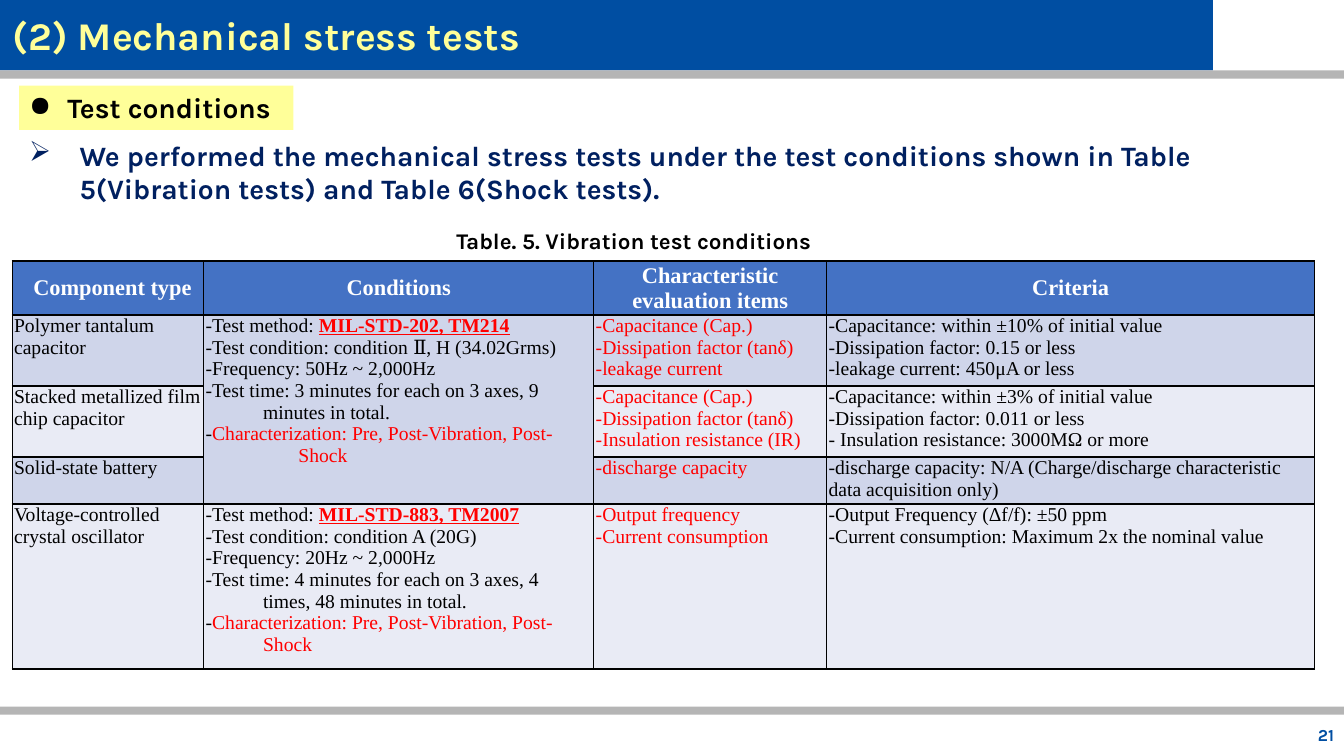
"""Build the slide on mechanical stress test conditions."""
from dataclasses import dataclass

from lxml import etree
from pptx import Presentation
from pptx.dml.color import RGBColor
from pptx.enum.shapes import MSO_SHAPE
from pptx.enum.text import MSO_ANCHOR, PP_ALIGN
from pptx.oxml.ns import qn
from pptx.util import Emu, Inches, Pt

RECT = MSO_SHAPE.RECTANGLE
TOP, MID = MSO_ANCHOR.TOP, MSO_ANCHOR.MIDDLE
LEFT, CENTER, RIGHT = PP_ALIGN.LEFT, PP_ALIGN.CENTER, PP_ALIGN.RIGHT
WIDE, HIGH = Inches(13.33), Inches(7.5)


@dataclass(frozen=True)
class Theme:
    """Colours, fonts and type sizes."""
    blue: str = "004EA2"
    gray: str = "B5B5B5"
    pale: str = "FFFF99"
    navy: str = "002060"
    black: str = "000000"
    white: str = "FFFFFF"
    red: str = "FF0000"
    head: str = "4472C4"
    bands: tuple[str, str] = ("CFD5EA", "E9EBF5")
    sans: str = "Karla"
    serif: str = "Times New Roman"
    title: int = 28
    lead: int = 20
    label: int = 16
    body: int = 14
    page: int = 12


THEME = Theme()


@dataclass(frozen=True)
class Box:
    """A place in percent of the slide's width and height."""
    left: float
    top: float
    width: float
    height: float

    def emu(self) -> tuple[Emu, Emu, Emu, Emu]:
        """Return the place in slide units."""
        return across(self.left), down(self.top), across(self.width), down(self.height)


@dataclass(frozen=True)
class Panel:
    """A filled bar, a text box or both."""
    box: Box
    fill: str = ""
    text: str = ""
    size: int = 0
    hue: str = THEME.black
    bullet: str = ""
    hang: float = 0
    align: PP_ALIGN = LEFT
    anchor: MSO_ANCHOR = TOP


@dataclass(frozen=True)
class Span:
    """A stretch of table text in one style."""
    text: str
    hue: str = THEME.black
    bold: bool = False
    line: bool = False


@dataclass(frozen=True)
class Para:
    """A paragraph of table text."""
    spans: tuple[Span, ...]
    hang: float = 0


Paras = tuple[Para, ...]


def across(share: float) -> Emu:
    """Turn a percentage of the width into a length."""
    return Emu(round(WIDE * share / 100))


def down(share: float) -> Emu:
    """Turn a percentage of the height into a length."""
    return Emu(round(HIGH * share / 100))


def lines(*texts: str, hue: str = THEME.black) -> Paras:
    """Make plain paragraphs in one colour."""
    return tuple(Para((Span(text, hue),)) for text in texts)


def method(code: str, state: str, start: int, time: str, hang: float) -> Paras:
    """Describe one vibration method."""
    note = Span("Characterization: Pre, Post-Vibration, Post-Shock", THEME.red)
    return (
        Para((Span("-Test method: "), Span(code, THEME.red, True, True))),
        *lines(f"-Test condition: condition {state}", f"-Frequency: {start}Hz ~ 2,000Hz"),
        Para((Span(f"-Test time: {time} in total."),), 0.57),
        Para((Span("-"), note), hang),
    )


PANELS = (
    Panel(Box(0, 0, 90.25, 9.33), THEME.blue),
    Panel(Box(0, 9.33, 100, 1.07), THEME.gray),
    Panel(Box(0, 93.47, 100, 1.07), THEME.gray),
    Panel(Box(95.65, 94.53, 4.35, 5.33), "", "21", THEME.page, THEME.blue,
          align=RIGHT, anchor=MID),
    Panel(Box(1.43, 11.33, 20.41, 5.87), THEME.pale, "Test conditions", THEME.lead,
          bullet="●", hang=0.38),
    Panel(Box(1.43, 17.6, 97.9, 10.27), "",
          "We performed the mechanical stress tests under the test conditions shown in "
          "Table 5(Vibration tests) and Table 6(Shock tests).",
          THEME.lead, THEME.navy, "➢", 0.5),
    Panel(Box(33.23, 29.33, 33.61, 4.93), THEME.white,
          "Table. 5. Vibration test conditions", THEME.label),
    Panel(Box(0.23, 1.73, 90, 5.87), "", "(2) Mechanical stress tests", THEME.title,
          THEME.pale, anchor=MID),
)

COLS = (14.25, 29.03, 17.33, 36.31)
ROWS = (7.14, 9.39, 9.39, 6.15, 21.83)
GRID = Box(0.9, 34.53, sum(COLS), sum(ROWS))
HEADS = ("Component type", "Conditions", "Characteristic evaluation items", "Criteria")
CELLS: tuple[tuple[Paras, ...], ...] = (
    tuple((Para((Span(head, THEME.white, True),)),) for head in HEADS),
    (lines("Polymer tantalum capacitor"),
     method("MIL-STD-202, TM214", "Ⅱ, H (34.02Grms)", 50,
            "3 minutes for each on 3 axes, 9 minutes", 0.92),
     lines("-Capacitance (Cap.)", "-Dissipation factor (tanδ)", "-leakage current",
           hue=THEME.red),
     lines("-Capacitance: within ±10% of initial value", "-Dissipation factor: 0.15 or less",
           "-leakage current: 450μA or less")),
    (lines("Stacked metallized film chip capacitor"), (),
     lines("-Capacitance (Cap.)", "-Dissipation factor (tanδ)",
           "-Insulation resistance (IR)", hue=THEME.red),
     lines("-Capacitance: within ±3% of initial value", "-Dissipation factor: 0.011 or less",
           "- Insulation resistance: 3000MΩ or more")),
    (lines("Solid-state battery"), (),
     lines("-discharge capacity", hue=THEME.red),
     lines("-discharge capacity: N/A (Charge/discharge characteristic data acquisition only)")),
    (lines("Voltage-controlled crystal oscillator"),
     method("MIL-STD-883, TM2007", "A (20G)", 20,
            "4 minutes for each on 3 axes, 4 times, 48 minutes", 0.57),
     lines("-Output frequency", "-Current consumption", hue=THEME.red),
     lines("-Output Frequency (Δf/f): ±50 ppm",
           "-Current consumption: Maximum 2x the nominal value")),
)


def indent(para, left: float, first: float) -> None:
    """Set a paragraph's left margin and first-line indent."""
    props = para._p.get_or_add_pPr()
    props.set("marL", str(Inches(left)))
    props.set("indent", str(Inches(first)))


def style(run, face: str, size: int, hue: str, bold: bool) -> None:
    """Set a run's font."""
    font = run.font
    font.name, font.size, font.bold = face, Pt(size), bold
    font.color.rgb = RGBColor.from_string(hue)


def draw(slide, panel: Panel) -> None:
    """Draw a bar or text box."""
    if panel.fill:
        shape = slide.shapes.add_shape(RECT, *panel.box.emu())
        shape.shadow.inherit = False
        shape.fill.solid()
        shape.fill.fore_color.rgb = RGBColor.from_string(panel.fill)
        shape.line.fill.background()
    else:
        shape = slide.shapes.add_textbox(*panel.box.emu())
    if not panel.text:
        return
    frame = shape.text_frame
    frame.text, frame.word_wrap, frame.vertical_anchor = panel.text, True, panel.anchor
    para = frame.paragraphs[0]
    para.alignment = panel.align
    if panel.bullet:
        indent(para, panel.hang, -panel.hang)
        etree.SubElement(para._p.pPr, qn("a:buChar")).set("char", panel.bullet)
    style(para.runs[0], THEME.sans, panel.size, panel.hue, True)


def edge(cell) -> None:
    """Give a cell four black borders."""
    props = cell._tc.get_or_add_tcPr()
    for side in ("lnL", "lnR", "lnT", "lnB"):
        line = etree.SubElement(props, qn(f"a:{side}"), w=str(Pt(1)))
        fill = etree.SubElement(line, qn("a:solidFill"))
        etree.SubElement(fill, qn("a:srgbClr"), val=THEME.black)


def write(cell, paras: Paras, head: bool) -> None:
    """Fill a cell with styled paragraphs."""
    cell.margin_left = cell.margin_right = Inches(0.02)
    cell.margin_top = cell.margin_bottom = 0
    cell.vertical_anchor = MID if head else TOP
    frame = cell.text_frame
    for place, item in enumerate(paras):
        para = frame.add_paragraph() if place else frame.paragraphs[0]
        para.alignment = CENTER if head else LEFT
        if item.hang:
            indent(para, item.hang, -item.hang)
        for span in item.spans:
            run = para.add_run()
            run.text = span.text
            style(run, THEME.serif, THEME.label if head else THEME.body, span.hue, span.bold)
            run.font.underline = span.line


def tabulate(slide) -> None:
    """Draw the table of vibration conditions."""
    table = slide.shapes.add_table(len(ROWS), len(COLS), *GRID.emu()).table
    table.horz_banding = False
    for col, share in zip(table.columns, COLS):
        col.width = across(share)
    for row, share in zip(table.rows, ROWS):
        row.height = down(share)
    for y, row in enumerate(CELLS):
        for x, paras in enumerate(row):
            cell = table.cell(y, x)
            edge(cell)
            cell.fill.solid()
            hue = THEME.bands[(y - 1) % 2] if y else THEME.head
            cell.fill.fore_color.rgb = RGBColor.from_string(hue)
            write(cell, paras, y == 0)
    indent(table.cell(0, 0).text_frame.paragraphs[0], 0.09, 0)
    table.cell(1, 1).merge(table.cell(3, 1))


def main() -> None:
    """Build and save the slide."""
    deck = Presentation()
    deck.slide_width, deck.slide_height = WIDE, HIGH
    slide = deck.slides.add_slide(deck.slide_layouts[6])
    for panel in PANELS:
        draw(slide, panel)
    tabulate(slide)
    deck.save("out.pptx")


if __name__ == "__main__":
    main()
